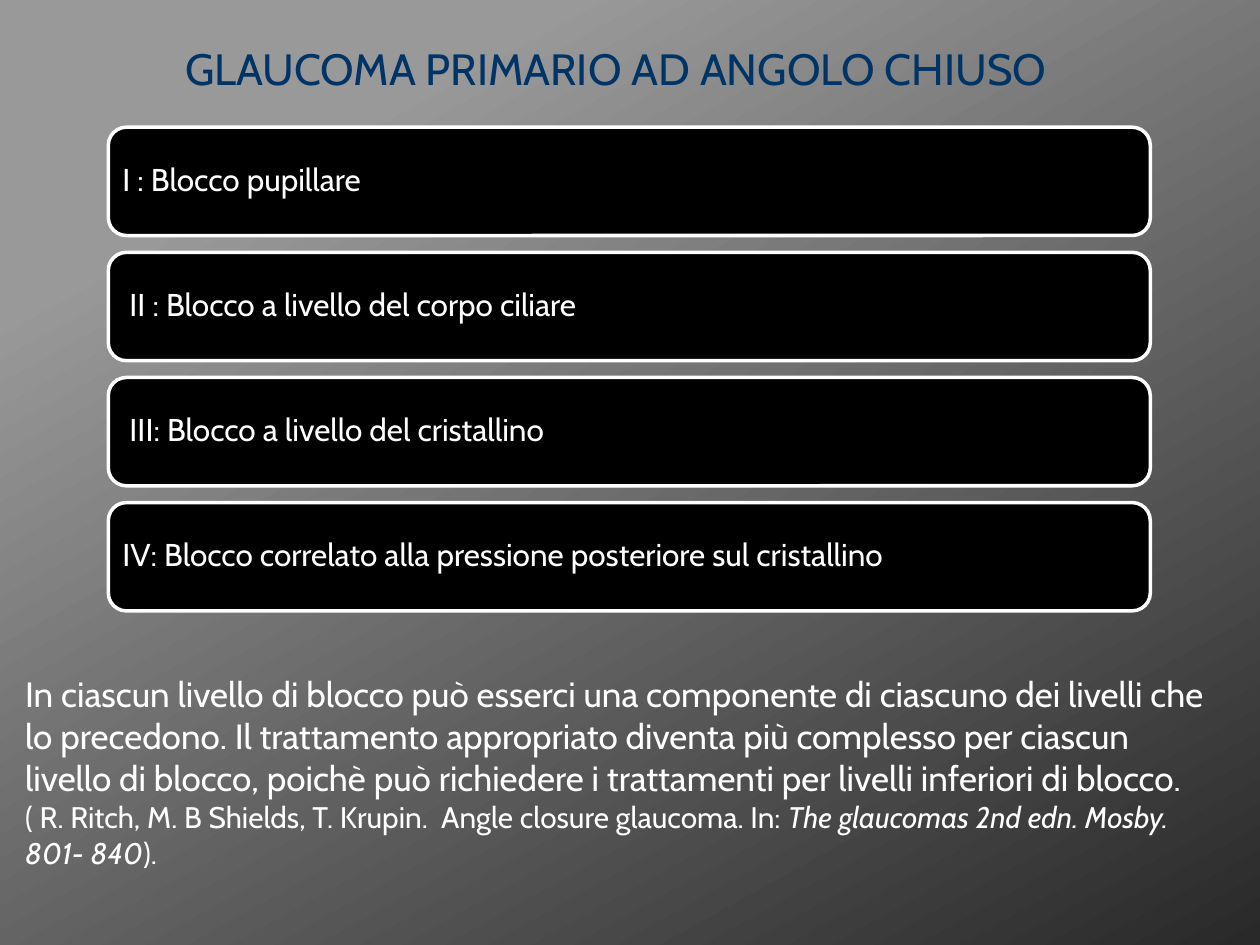
from dataclasses import dataclass

import pptx
import pptx.dml.color
import pptx.enum.shapes
import pptx.enum.text
import pptx.util

FONT = "Cabin"
WHITE, BLACK, NAVY = "FFFFFF", "000000", "003366"
SLIDE_WIDTH, SLIDE_HEIGHT = 10, 7.5
TEXT_LEFT, TEXT_WIDTH = 0.2, 9.37
TITLE_TOP, BODY_TOP = 0.33, 5.34

# Stack of blocks: one column, equal rows
BLOCK_LEFT, BLOCK_TOP = 0.86, 1.01
BLOCK_WIDTH, BLOCK_HEIGHT = 8.27, 0.86
ROW_STEP = 0.993


@dataclass
class Run:
    text: str
    italic: bool = False


@dataclass
class Paragraph:
    size: int
    runs: list[Run]


BLOCKS = [
    "I : Blocco pupillare",
    " II : Blocco a livello del corpo ciliare",
    " III: Blocco a livello del cristallino",
    "IV: Blocco correlato alla pressione posteriore sul cristallino",
]
BODY = [
    Paragraph(20, [Run(
        "In ciascun livello di blocco può esserci una componente di ciascuno "
        "dei livelli che lo precedono. Il trattamento appropriato diventa più "
        "complesso per ciascun livello di blocco, poichè può richiedere i "
        "trattamenti per livelli inferiori di blocco.")]),
    Paragraph(17, [
        Run("( R. Ritch, M. B Shields, T. Krupin.  Angle closure glaucoma. In: "),
        Run("The glaucomas 2nd edn. Mosby. 801- 840", italic=True),
        Run(")."),
    ]),
]


def color(value: str) -> pptx.dml.color.RGBColor:
    return pptx.dml.color.RGBColor.from_string(value)


def box(left: float, top: float, width: float, height: float) -> list:
    return [pptx.util.Inches(length) for length in (left, top, width, height)]


def style(paragraph, size: int, value: str, alignment) -> None:
    paragraph.alignment = alignment
    paragraph.font.name = FONT
    paragraph.font.size = pptx.util.Pt(size)
    paragraph.font.color.rgb = color(value)


def set_frame(frame, anchor, margin: float = 0) -> None:
    frame.word_wrap = True
    frame.auto_size = pptx.enum.text.MSO_AUTO_SIZE.NONE
    frame.vertical_anchor = anchor
    frame.margin_left = frame.margin_right = pptx.util.Inches(margin)
    frame.margin_top = frame.margin_bottom = pptx.util.Inches(margin)


def paint_background(slide) -> None:
    fill = slide.background.fill
    fill.gradient()
    fill.gradient_angle = 360 - 61
    for stop, (position, value) in zip(
            fill.gradient_stops, [(0.19, "999999"), (1, "292929")]):
        stop.position = position
        stop.color.rgb = color(value)


def add_title(slide, text: str) -> None:
    title = slide.shapes.title
    title.left, title.top, title.width, title.height = box(
        TEXT_LEFT, TITLE_TOP, TEXT_WIDTH, 0.5)
    set_frame(title.text_frame, pptx.enum.text.MSO_ANCHOR.TOP)
    title.text_frame.text = text
    style(title.text_frame.paragraphs[0], 25, NAVY, pptx.enum.text.PP_ALIGN.CENTER)


def add_block(slide, row: int, text: str) -> None:
    shape = slide.shapes.add_shape(
        pptx.enum.shapes.MSO_SHAPE.ROUNDED_RECTANGLE,
        *box(BLOCK_LEFT, BLOCK_TOP + row * ROW_STEP, BLOCK_WIDTH, BLOCK_HEIGHT))
    shape.shadow.inherit = False
    shape.fill.solid()
    shape.fill.fore_color.rgb = color(BLACK)
    shape.line.color.rgb = color(WHITE)
    shape.line.width = pptx.util.Pt(2)
    set_frame(shape.text_frame, pptx.enum.text.MSO_ANCHOR.MIDDLE, 0.07)
    shape.text_frame.text = text
    paragraph = shape.text_frame.paragraphs[0]
    paragraph.line_spacing = 0.9
    style(paragraph, 18, WHITE, pptx.enum.text.PP_ALIGN.LEFT)


def add_body(slide, paragraphs: list[Paragraph]) -> None:
    text_box = slide.shapes.add_textbox(
        *box(TEXT_LEFT, BODY_TOP, TEXT_WIDTH, 1.6))
    frame = text_box.text_frame
    set_frame(frame, pptx.enum.text.MSO_ANCHOR.TOP)
    for index, content in enumerate(paragraphs):
        paragraph = frame.add_paragraph() if index else frame.paragraphs[0]
        style(paragraph, content.size, WHITE, pptx.enum.text.PP_ALIGN.LEFT)
        for part in content.runs:
            run = paragraph.add_run()
            run.text = part.text
            if part.italic:
                run.font.italic = True


def main() -> None:
    presentation = pptx.Presentation()
    presentation.slide_width = pptx.util.Inches(SLIDE_WIDTH)
    presentation.slide_height = pptx.util.Inches(SLIDE_HEIGHT)
    title_only = presentation.slide_layouts.get_by_name("Title Only")
    slide = presentation.slides.add_slide(title_only)

    paint_background(slide)
    add_title(slide, "GLAUCOMA PRIMARIO AD ANGOLO CHIUSO")
    for row, text in enumerate(BLOCKS):
        add_block(slide, row, text)
    add_body(slide, BODY)
    presentation.save("out.pptx")


if __name__ == "__main__":
    main()
